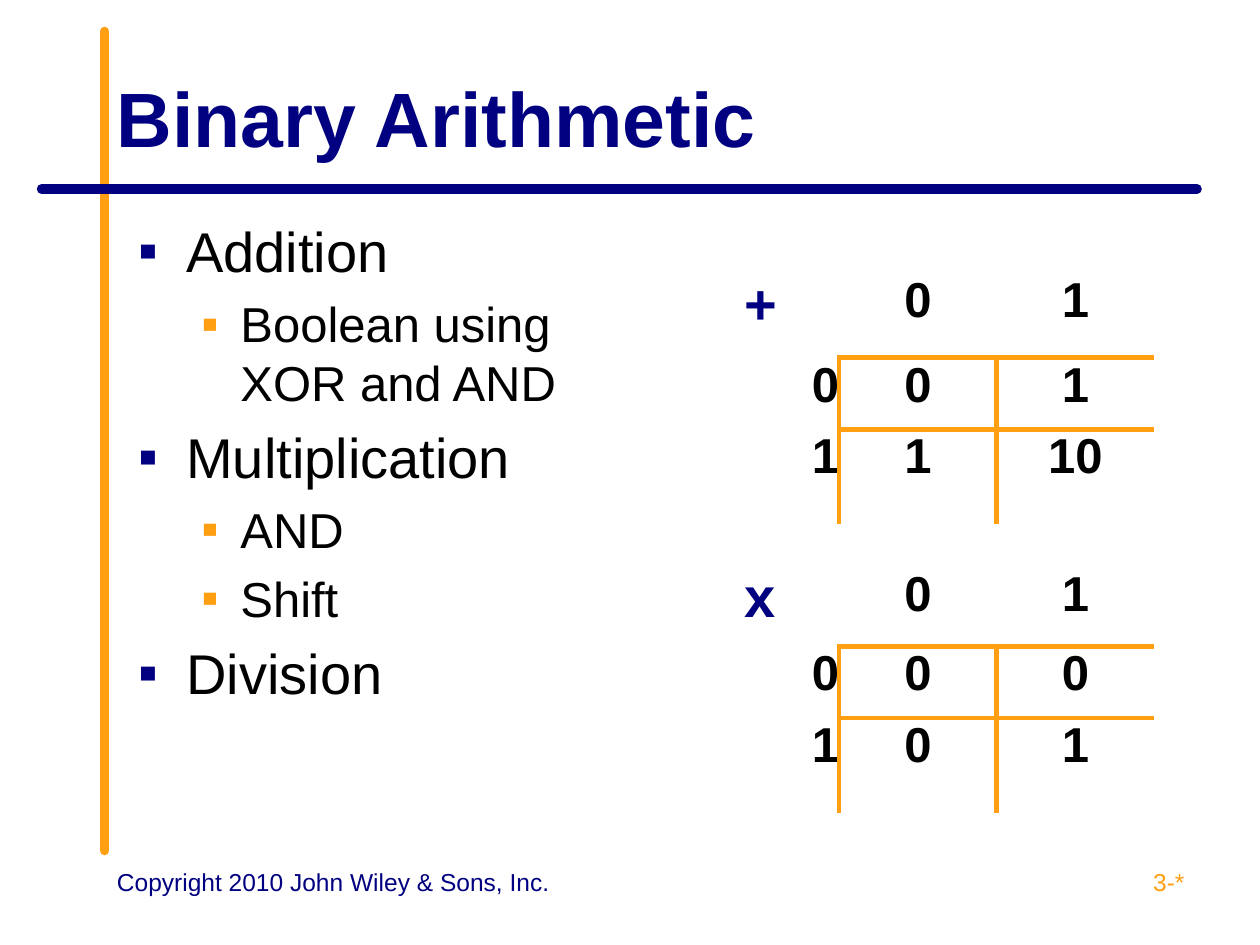
from lxml import etree
from pptx import Presentation
from pptx.dml.color import RGBColor
from pptx.enum.text import MSO_ANCHOR, PP_ALIGN
from pptx.oxml.ns import qn
from pptx.util import Inches, Pt

LEFT, CENTER, RIGHT = PP_ALIGN.LEFT, PP_ALIGN.CENTER, PP_ALIGN.RIGHT
TOP, MIDDLE = MSO_ANCHOR.TOP, MSO_ANCHOR.MIDDLE

NAVY, ORANGE, BLACK = "000080", "FF9F11", "000000"

# Per outline level: left margin, hanging indent, space before, size, bullet colour
LEVELS = [
    (0.38, 0.38, 6.4, 32, NAVY),
    (0.81, 0.31, 5.6, 28, ORANGE),
]
TOPICS = [
    (0, "Addition"),
    (1, "Boolean using XOR and AND"),
    (0, "Multiplication"),
    (1, "AND"),
    (1, "Shift"),
    (0, "Division"),
]
ADDITION = [["+", "0", "1"], ["0", "0", "1"], ["1", "1", "10"]]
MULTIPLICATION = [["x", "0", "1"], ["0", "0", "0"], ["1", "0", "1"]]
COLUMN_WIDTH = 1.25


def rgb(value):
    return RGBColor.from_string(value)


def set_font(font, size, color, bold=False):
    font_format = {"name": "Arial", "size": Pt(size), "bold": bold}
    for attribute, value in font_format.items():
        setattr(font, attribute, value)
    font.color.rgb = rgb(color)


def add_rule(slide, start, end, color):
    """Draw a thick round-capped line of the slide frame."""
    rule = slide.shapes.add_connector(1, *map(Inches, start + end))
    rule.line.width = Pt(5.5)
    rule.line.color.rgb = rgb(color)
    rule.line._get_or_add_ln().set("cap", "rnd")
    etree.SubElement(rule._element.spPr, qn("a:effectLst"))


def add_frame(slide, box, anchor=TOP):
    frame = slide.shapes.add_textbox(*map(Inches, box)).text_frame
    frame.word_wrap = True
    frame.vertical_anchor = anchor
    return frame


def add_label(slide, box, text, size, color, bold=False, align=LEFT, anchor=TOP):
    paragraph = add_frame(slide, box, anchor).paragraphs[0]
    paragraph.text = text
    paragraph.alignment = align
    set_font(paragraph.runs[0].font, size, color, bold)


def add_bullet(paragraph, margin, hanging, color):
    properties = paragraph._p.get_or_add_pPr()
    properties.set("marL", str(Inches(margin)))
    properties.set("indent", str(-Inches(hanging)))
    bullet_color = etree.SubElement(properties, qn("a:buClr"))
    etree.SubElement(bullet_color, qn("a:srgbClr"), val=color)
    etree.SubElement(properties, qn("a:buFont"), typeface="Arial")
    etree.SubElement(properties, qn("a:buChar"), char="▪")


def add_outline(slide, box, topics):
    frame = add_frame(slide, box)
    for index, (level, text) in enumerate(topics):
        margin, hanging, space, size, bullet_color = LEVELS[level]
        paragraph = frame.add_paragraph() if index else frame.paragraphs[0]
        paragraph.text = text
        paragraph.level = level
        add_bullet(paragraph, margin, hanging, bullet_color)
        if index:
            paragraph.space_before = Pt(space)
        set_font(paragraph.runs[0].font, size, BLACK)


def set_borders(cell, row, column):
    """Rule off the headings and separate the results; leave the rest open."""
    ruled = {
        "a:lnL": row > 0 and column > 0,
        "a:lnR": row > 0 and column < 2,
        "a:lnT": column > 0 and row > 0,
        "a:lnB": column > 0 and row < 2,
    }
    properties = cell._tc.get_or_add_tcPr()
    for tag, visible in ruled.items():
        border = etree.SubElement(properties, qn(tag), w=str(Pt(3)))
        if visible:
            fill = etree.SubElement(border, qn("a:solidFill"))
            etree.SubElement(fill, qn("a:srgbClr"), val=ORANGE)
        else:
            etree.SubElement(border, qn("a:noFill"))


def fill_cell(cell, row, column, text):
    for side in ("left", "right", "top", "bottom"):
        setattr(cell, f"margin_{side}", 0)
    set_borders(cell, row, column)
    cell.fill.background()
    paragraph = cell.text_frame.paragraphs[0]
    paragraph.text = text
    paragraph.alignment = RIGHT if row and not column else CENTER
    is_operator = row == column == 0
    size, color = (32, NAVY) if is_operator else (28, BLACK)
    set_font(paragraph.runs[0].font, size, color, bold=True)


def add_operation_table(slide, left, top, row_heights, values):
    box = (left, top, COLUMN_WIDTH * 3, sum(row_heights))
    table = slide.shapes.add_table(3, 3, *map(Inches, box)).table
    table.first_row = table.horz_banding = False
    for column in table.columns:
        column.width = Inches(COLUMN_WIDTH)
    for row, (height, texts) in enumerate(zip(row_heights, values)):
        table.rows[row].height = Inches(height)
        for column, text in enumerate(texts):
            fill_cell(table.cell(row, column), row, column, text)


def main():
    presentation = Presentation()
    presentation.slide_width = Inches(10)
    presentation.slide_height = Inches(7.5)
    slide = presentation.slides.add_slide(presentation.slide_layouts[6])

    add_rule(slide, (0.83, 6.75), (0.83, 0.25), ORANGE)
    add_rule(slide, (9.5, 1.5), (0.33, 1.5), NAVY)
    add_label(slide, (0.83, 0.3, 8.67, 1.25), "Binary Arithmetic", 44, NAVY,
              bold=True, anchor=MIDDLE)
    add_outline(slide, (1, 1.67, 4.21, 4.95), TOPICS)
    add_operation_table(slide, 5.41, 2.17, (0.67, 0.57, 0.75), ADDITION)
    add_operation_table(slide, 5.41, 4.5, (0.63, 0.57, 0.75), MULTIPLICATION)
    add_label(slide, (7.17, 6.83, 2.33, 0.52), "3-*", 14, ORANGE, align=RIGHT)
    add_label(slide, (0.83, 6.83, 3.67, 0.52),
              "Copyright 2010 John Wiley & Sons, Inc.", 14, NAVY)

    presentation.save("out.pptx")


if __name__ == "__main__":
    main()
